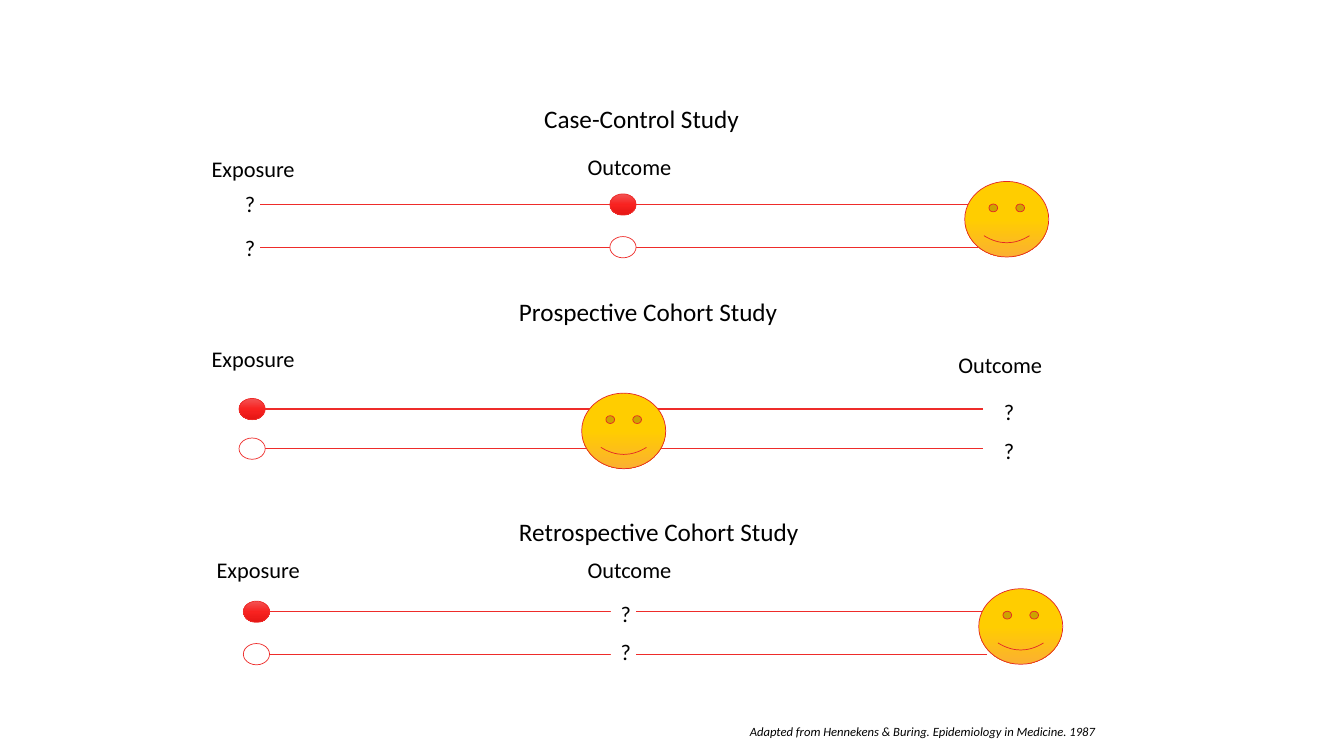
from copy import deepcopy

from pptx import Presentation
from pptx.dml.color import RGBColor
from pptx.enum.shapes import MSO_CONNECTOR, MSO_SHAPE
from pptx.enum.text import MSO_AUTO_SIZE
from pptx.oxml.ns import qn
from pptx.util import Pt
from lxml.etree import SubElement

COLORS = {
    "text": "000000", "white": "FFFFFF", "line": "EE2C2A", "rim": "E32726",
    "red": ["F25454", "F82220", "E51614"],
    "gold": ["FFCD00", "FFCD00", "FBB031"],
}
FACE = (60, 54)
DOT = (18.7, 15.2)
SPAN = 513.4

STUDIES = [
    dict(box=(185.8, 70.6), title=("Case-Control Study", 195.8),
         labels=[("Exposure", -41.8, 36.7), ("Outcome", 226.8, 35.2)],
         rows=(75.5, 106), marks=(-18, 61.9, 92.8), dots=259.2,
         face=(503.3, 59)),
    dict(box=(188.7, 208.1), title=("Prospective Cohort Study", 174.9),
         labels=[("Exposure", -44.7, 34.6), ("Outcome", 488.8, 38.9)],
         rows=(84.1, 112.4), marks=(521.2, 72.7, 100.8), dots=-8.6,
         face=(226.8, 72.7)),
    dict(box=(191.8, 365), title=("Retrospective Cohort Study", 171.8),
         labels=[("Exposure", -44.2, 28.8), ("Outcome", 220.8, 28.8)],
         rows=(72, 102.3), marks=(244.5, 59.8, 87.2), dots=-8.6,
         face=(507.3, 55.5), cover=True),
]


def tint(name):
    """Return the named colour."""
    return RGBColor.from_string(COLORS[name])


def add_text(slide, words, box, size, slant=False, cover=False):
    """Add one line of text, on white if it covers a line."""
    shape = slide.shapes.add_textbox(*map(Pt, box))
    if cover:
        shape.fill.solid()
        shape.fill.fore_color.rgb = tint("white")
    frame = shape.text_frame
    frame.word_wrap = True
    frame.auto_size = MSO_AUTO_SIZE.SHAPE_TO_FIT_TEXT
    run = frame.paragraphs[0].add_run()
    run.text = words
    run.font.name = "Calibri"
    run.font.size = Pt(size)
    run.font.italic = slant
    run.font.color.rgb = tint("text")


def add_line(slide, left, top):
    """Add a level time line."""
    ends = map(Pt, (left, top, left + SPAN, top))
    line = slide.shapes.add_connector(MSO_CONNECTOR.STRAIGHT, *ends)
    line.line.color.rgb = tint("line")
    line.line.width = Pt(1)
    SubElement(line._element.spPr, qn("a:effectLst"))


def add_form(slide, kind, box, fill, rim):
    """Add a plain or shaded shape with a thin rim."""
    shape = slide.shapes.add_shape(kind, *map(Pt, box))
    shape.shadow.inherit = False
    shape.line.color.rgb = tint(rim)
    shape.line.width = Pt(0.5)
    if fill == "white":
        shape.fill.solid()
        shape.fill.fore_color.rgb = tint(fill)
        return
    shape.fill.gradient()
    shape.fill.gradient_angle = 270
    stops = next(shape._element.spPr.iter(qn("a:gsLst")))
    stops.insert(1, deepcopy(stops[0]))
    for step, stop in enumerate(shape.fill.gradient_stops):
        stop.position = step / 2
        stop.color.rgb = RGBColor.from_string(COLORS[fill][step])


def add_study(slide, box, title, labels, rows, marks, dots, face, cover=False):
    """Draw one study, placed from the start of its lines and its title top."""
    left, top = box
    name, shift = title
    add_text(slide, name, (left + shift, top, 286, 28.8), 18)
    for word, x, y in labels:
        add_text(slide, word, (left + x, top + y, 82.8, 26.6), 16)
    wide, high = DOT
    for y, fill in zip(rows, ("red", "white")):
        add_line(slide, left, top + y)
        spot = (left + dots - wide / 2, top + y - high / 2, wide, high)
        add_form(slide, MSO_SHAPE.OVAL, spot, fill, "line")
    add_form(slide, MSO_SHAPE.SMILEY_FACE,
             (left + face[0], top + face[1], *FACE), "gold", "rim")
    x, *tops = marks
    for y in tops:
        add_text(slide, "?", (left + x, top + y, 18, 26.6), 16, cover=cover)


def main():
    """Build the slide and save it."""
    deck = Presentation()
    deck.slide_width, deck.slide_height = Pt(960), Pt(540)
    slide = deck.slides.add_slide(deck.slide_layouts[6])
    for study in STUDIES:
        add_study(slide, **study)
    add_text(slide,
             "Adapted from Hennekens & Buring. Epidemiology in Medicine. 1987",
             (528.5, 513.4, 311.8, 18), 9, slant=True)
    deck.save("out.pptx")


if __name__ == "__main__":
    main()
